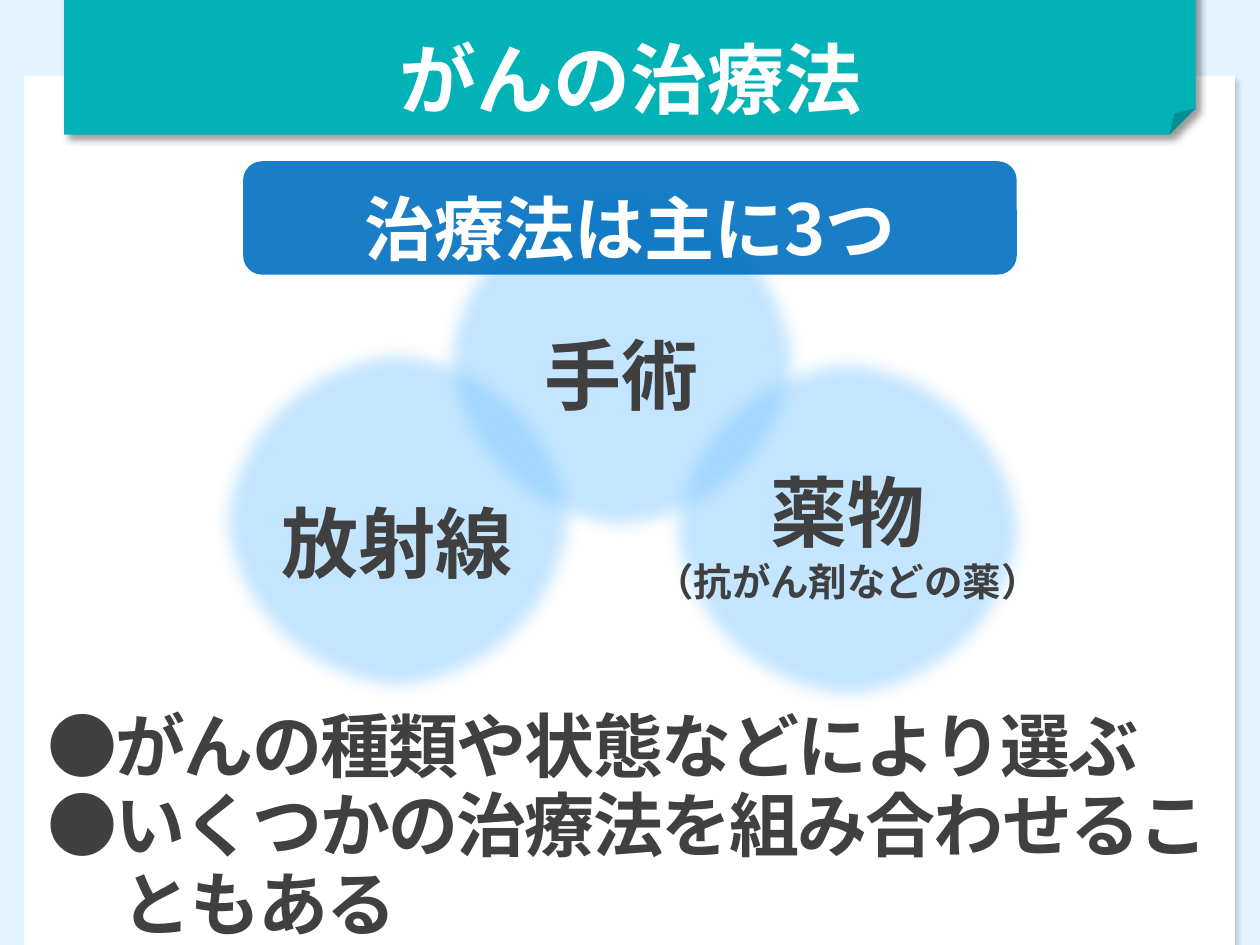
"""Build a slide on the three main cancer treatments."""
from lxml import etree
from pptx import Presentation
from pptx import util as u
from pptx.dml.color import RGBColor
from pptx.enum import lang, shapes, text
from pptx.oxml.ns import qn

FONT = "Noto Sans CJK JP"
GREY = "404040"


def add_block(page, kind, place, color, alpha=100):
    """Add a borderless preset shape and return it with its effect list."""
    block = page.shapes.add_shape(kind, *map(u.Inches, place))
    block.fill.solid()
    block.fill.fore_color.rgb = RGBColor.from_string(color)
    block.line.fill.background()
    block.shadow.inherit = False
    if alpha < 100:
        fill_color = block.fill._xPr.find(qn("a:solidFill"))[0]
        etree.SubElement(fill_color, qn("a:alpha"), val=str(alpha * 1000))
    return block, block._element.spPr.find(qn("a:effectLst"))


def write(box, lines, size, color, insets=(0.1, 0.05, 0.1, 0.05),
          align=text.PP_ALIGN.CENTER, wrap=True):
    """Fill a box with bold lines and return its paragraphs."""
    frame = box.text_frame
    frame.word_wrap = wrap
    (frame.margin_left, frame.margin_top,
     frame.margin_right, frame.margin_bottom) = map(u.Inches, insets)
    for index, line in enumerate(lines):
        para = frame.add_paragraph() if index else frame.paragraphs[0]
        para.alignment = align
        span = para.add_run()
        span.text = line
        span.font.size = u.Pt(size)
        span.font.bold = True
        span.font.name = FONT
        span.font.language_id = lang.MSO_LANGUAGE_ID.JAPANESE
        span.font.color.rgb = RGBColor.from_string(color)
        etree.SubElement(span.font._element, qn("a:ea"), typeface=FONT)
    return frame.paragraphs


deck = Presentation()
deck.slide_width, deck.slide_height = u.Inches(10), u.Inches(7.5)
page = deck.slides.add_slide(deck.slide_layouts[6])
page.background.fill.solid()
page.background.fill.fore_color.rgb = RGBColor.from_string("E1F4FF")

preset = shapes.MSO_SHAPE
for kind, place, color, blur, distance, alpha in [
    (preset.RECTANGLE, (0.19, 0.6, 9.61, 7.07), "FFFFFF", 3, 4, 18),
    (preset.FOLDED_CORNER, (0.51, -0.19, 8.98, 1.26), "01B3B7", 4, 3, 40),
]:
    panel, effects = add_block(page, kind, place, color)
    shadow = etree.SubElement(
        effects, qn("a:outerShdw"), blurRad=str(u.Pt(blur)),
        dist=str(u.Pt(distance)), dir="2700000", algn="tl", rotWithShape="0")
    shade = etree.SubElement(shadow, qn("a:srgbClr"), val="000000")
    etree.SubElement(shade, qn("a:alpha"), val=str(alpha * 1000))

title = page.shapes.add_textbox(*map(u.Inches, (2.41, 0.2, 5.19, 0.84)))
write(title, ["がんの治療法"], 44, "FFFFFF")

for label, left, top, insets in [
    ("手術", 3.45, 1.41, (0.1, 0.28, 0.1, 0.05)),
    ("放射線", 1.67, 2.69, (0.1, 0.39, 0.1, 0.05)),
    ("薬物", 5.24, 2.76, (0, 0.05, 0, 0.35)),
]:
    circle, effects = add_block(
        page, preset.OVAL, (left, top, 2.97, 2.88), "81C9FF", 47)
    etree.SubElement(effects, qn("a:softEdge"), rad=str(u.Pt(10)))
    circle.text_frame.vertical_anchor = text.MSO_ANCHOR.MIDDLE
    write(circle, [label], 44, GREY, insets)

detail = page.shapes.add_textbox(*map(u.Inches, (5.08, 4.38, 3.29, 0.47)))
write(detail, ["（抗がん剤などの薬）"], 22, GREY, wrap=False)

points = page.shapes.add_textbox(*map(u.Inches, (0.28, 5.57, 9.46, 1.99)))
for para in write(points, ["●がんの種類や状態などにより選ぶ",
                           "●いくつかの治療法を組み合わせることもある"],
                  40, GREY, align=text.PP_ALIGN.LEFT):
    para.line_spacing = u.Pt(45)
    properties = para._p.get_or_add_pPr()
    properties.set("marL", str(u.Inches(0.59)))
    properties.set("indent", str(u.Inches(-0.59)))
    para.runs[0].font._element.set("spc", "-100")

banner, effects = add_block(
    page, preset.ROUNDED_RECTANGLE, (1.93, 1.28, 6.14, 0.9), "0070C0", 90)
banner.text_frame.vertical_anchor = text.MSO_ANCHOR.MIDDLE
write(banner, ["治療法は主に3つ"], 40, "FFFFFF", (0.1, 0.2, 0.1, 0.05))

deck.save("out.pptx")
